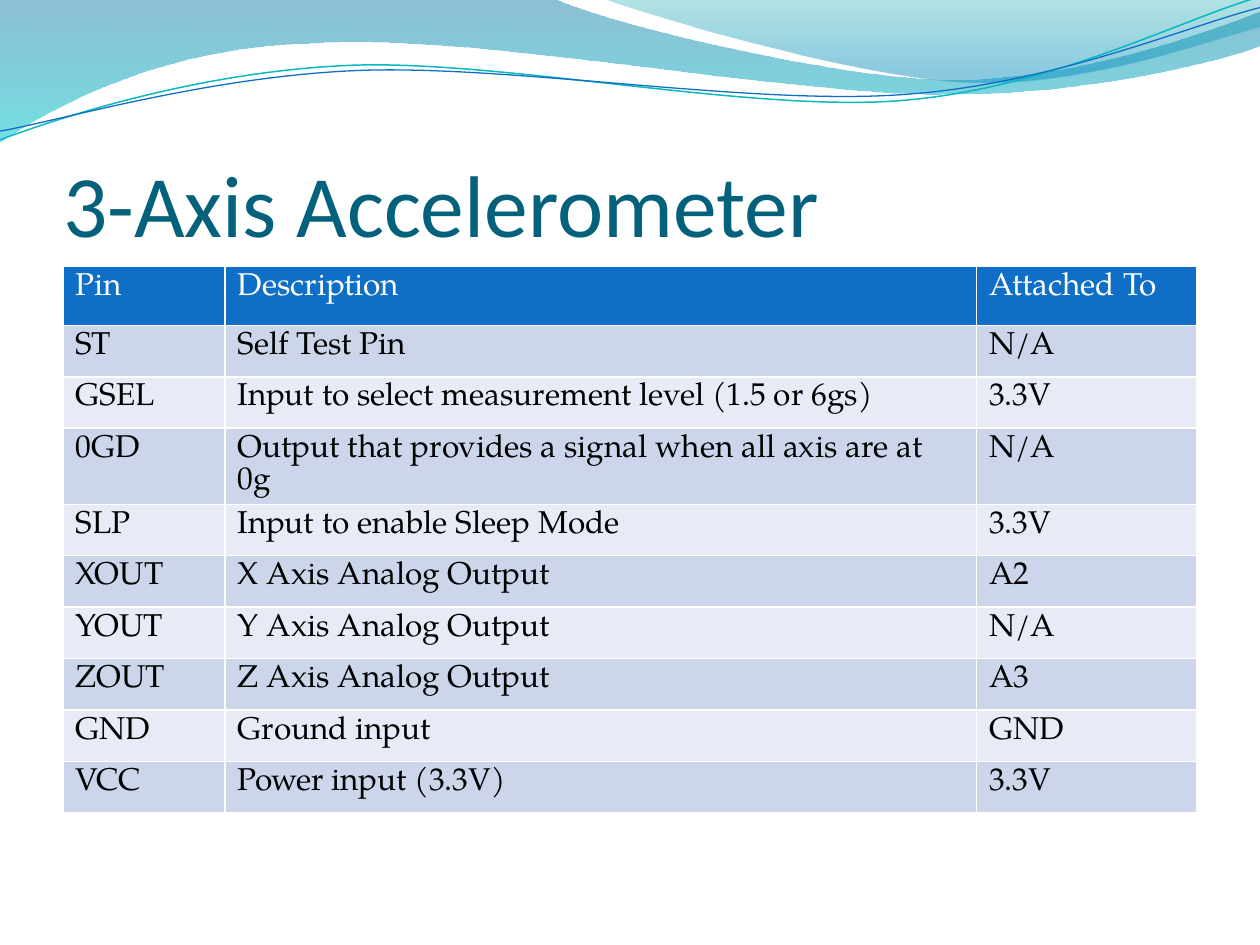
from dataclasses import dataclass
from typing import Optional

from lxml.etree import SubElement
from pptx import Presentation
from pptx.dml.color import RGBColor
from pptx.enum.text import MSO_ANCHOR, MSO_AUTO_SIZE, PP_ALIGN
from pptx.oxml.ns import qn
from pptx.util import Pt

COLORS = {
    "title": "04617B", "header": "0F6FC6", "odd": "CCD5EA", "even": "E7EBF5",
    "white": "FFFFFF", "black": "000000",
    "deep": "0074A1", "cyan": "00C6CF", "teal": "00A1A9", "sky": "008BBF",
    "aqua line": "0AB8BF", "blue line": "0F6FC6",
}


@dataclass
class GradientStop:
    position: float
    color: str
    opacity: int  # percent


@dataclass
class Wave:
    start: tuple
    segments: list  # (x, y) is a line, (x1, y1, x2, y2, x, y) a cubic curve
    gradient: Optional[list] = None
    line_color: str = ""
    line_width: float = 0


WAVES = [
    Wave((0, 0), [
        (316.8, -0.7),
        (342.7, 12.2, 478.1, 45.4, 545.8, 45.4),
        (614.2, 45.4, 689.8, 18.7, 720, 6.5),
        (720.7, 25.9),
        (707.8, 31.7, 626.4, 54.7, 537.1, 54),
        (446.4, 54, 275, 20.2, 185, 24.5),
        (92.9, 25.9, 33.1, 59.8, -0.7, 81.4),
        (0, 0),
    ], gradient=[GradientStop(0, "deep", 45), GradientStop(1, "cyan", 55)]),
    Wave((344.9, -0.7), [
        (366.5, 7.9, 491, 44.6, 553.7, 46.8),
        (616.3, 49.7, 691.9, 23, 720, 15.1),
        (720, 0),
        (344.9, -0.7),
    ], gradient=[GradientStop(0, "teal", 30), GradientStop(0.8, "sky", 45)]),
    Wave((0, 79.9), [
        (34.6, 67, 113.8, 41, 199.4, 37.4),
        (284.4, 33.8, 427, 64.1, 513.4, 57.6),
        (599.8, 51.1, 675.4, 10.8, 718.6, -1.4),
    ], line_color="aqua line", line_width=0.85),
    Wave((0, 74.9), [
        (33.8, 69.1, 118.1, 43.9, 203.8, 40.3),
        (290.2, 36.7, 429.8, 60.5, 516.2, 54),
        (601.9, 48.2, 677.5, 15.1, 720, 4.3),
    ], line_color="blue line", line_width=0.75),
]

PIN_ROWS = [
    ("Pin", "Description", "Attached To"),
    ("ST", "Self Test Pin", "N/A"),
    ("GSEL", "Input to select measurement level (1.5 or 6gs)", "3.3V"),
    ("0GD", "Output that provides a signal when all axis are at 0g", "N/A"),
    ("SLP", "Input to enable Sleep Mode", "3.3V"),
    ("XOUT", "X Axis Analog Output", "A2"),
    ("YOUT", "Y Axis Analog Output", "N/A"),
    ("ZOUT", "Z Axis Analog Output", "A3"),
    ("GND", "Ground input", "GND"),
    ("VCC", "Power input (3.3V)", "3.3V"),
]
COLUMN_WIDTHS = (92.7, 429.3, 126)
HEADER_HEIGHT, ROW_HEIGHT = 33.6, 29.4


def rgb(name: str) -> RGBColor:
    return RGBColor.from_string(COLORS[name])


def bend_segments(shape, segments: list) -> None:
    """Join each three line steps of a curved segment into one cubic curve."""
    outline = next(shape.element.iter(qn("a:path")))
    steps = iter(outline.findall(qn("a:lnTo")))
    for segment in segments:
        first = next(steps)
        if len(segment) == 2:
            continue
        curve = outline.makeelement(qn("a:cubicBezTo"))
        first.addprevious(curve)
        for step in (first, next(steps), next(steps)):
            curve.append(step[0])
            outline.remove(step)


def draw_wave(slide, wave: Wave) -> None:
    points = [(Pt(segment[i]), Pt(segment[i + 1]))
              for segment in wave.segments for i in range(0, len(segment), 2)]
    builder = slide.shapes.build_freeform(Pt(wave.start[0]), Pt(wave.start[1]))
    builder.add_line_segments(points, close=wave.gradient is not None)
    shape = builder.convert_to_shape()
    bend_segments(shape, wave.segments)
    shape.shadow.inherit = False
    if wave.gradient is None:
        shape.fill.background()
        shape.line.color.rgb = rgb(wave.line_color)
        shape.line.width = Pt(wave.line_width)
        return
    shape.line.fill.background()
    shape.fill.gradient()
    shape.fill.gradient_angle = 270  # top to bottom
    for target, stop in zip(shape.fill.gradient_stops, wave.gradient):
        target.position = stop.position
        target.color.rgb = rgb(stop.color)
    for color, stop in zip(shape.element.iter(qn("a:srgbClr")), wave.gradient):
        SubElement(color, qn("a:alpha"), val=str(stop.opacity * 1000))


def draw_title(slide, text: str) -> None:
    title = slide.shapes.title
    title.element.getparent().append(title.element)  # in front of the waves
    title.left, title.top, title.width, title.height = Pt(36), Pt(55.5), Pt(648), Pt(90)
    frame = title.text_frame
    frame.text = text
    frame.auto_size = MSO_AUTO_SIZE.NONE
    frame.vertical_anchor = MSO_ANCHOR.BOTTOM
    frame.margin_left = frame.margin_right = frame.margin_bottom = 0
    paragraph = frame.paragraphs[0]
    paragraph.alignment = PP_ALIGN.LEFT
    paragraph.font.name = "Calibri"
    paragraph.font.size = Pt(50)
    paragraph.font.color.rgb = rgb("title")


def add_borders(cell) -> None:
    properties = cell._tc.get_or_add_tcPr()
    for side in "LRTB":
        line = SubElement(properties, qn(f"a:ln{side}"), w=str(Pt(1)))
        fill = SubElement(line, qn("a:solidFill"))
        SubElement(fill, qn("a:srgbClr"), val=COLORS["white"])


def draw_pin_table(slide) -> None:
    height = HEADER_HEIGHT + ROW_HEIGHT * (len(PIN_ROWS) - 1)
    table = slide.shapes.add_table(len(PIN_ROWS), len(COLUMN_WIDTHS), Pt(36), Pt(152.3),
                                   Pt(sum(COLUMN_WIDTHS)), Pt(height)).table
    for column, width in zip(table.columns, COLUMN_WIDTHS):
        column.width = Pt(width)
    for index, texts in enumerate(PIN_ROWS):
        is_header = index == 0
        table.rows[index].height = Pt(HEADER_HEIGHT if is_header else ROW_HEIGHT)
        fill = "header" if is_header else ("odd" if index % 2 else "even")
        for cell, text in zip(table.rows[index].cells, texts):
            add_borders(cell)
            cell.fill.solid()
            cell.fill.fore_color.rgb = rgb(fill)
            cell.text = text
            font = cell.text_frame.paragraphs[0].font
            font.name = "TeX Gyre Pagella"
            font.size = Pt(18)
            font.bold = False
            font.color.rgb = rgb("white" if is_header else "black")


def main() -> None:
    presentation = Presentation()
    presentation.slide_width, presentation.slide_height = Pt(720), Pt(540)
    slide = presentation.slides.add_slide(presentation.slide_layouts[5])

    # Decorative waves along the top edge
    for wave in WAVES:
        draw_wave(slide, wave)

    # Title and pin assignments
    draw_title(slide, "3-Axis Accelerometer")
    draw_pin_table(slide)
    presentation.save("out.pptx")


if __name__ == "__main__":
    main()
